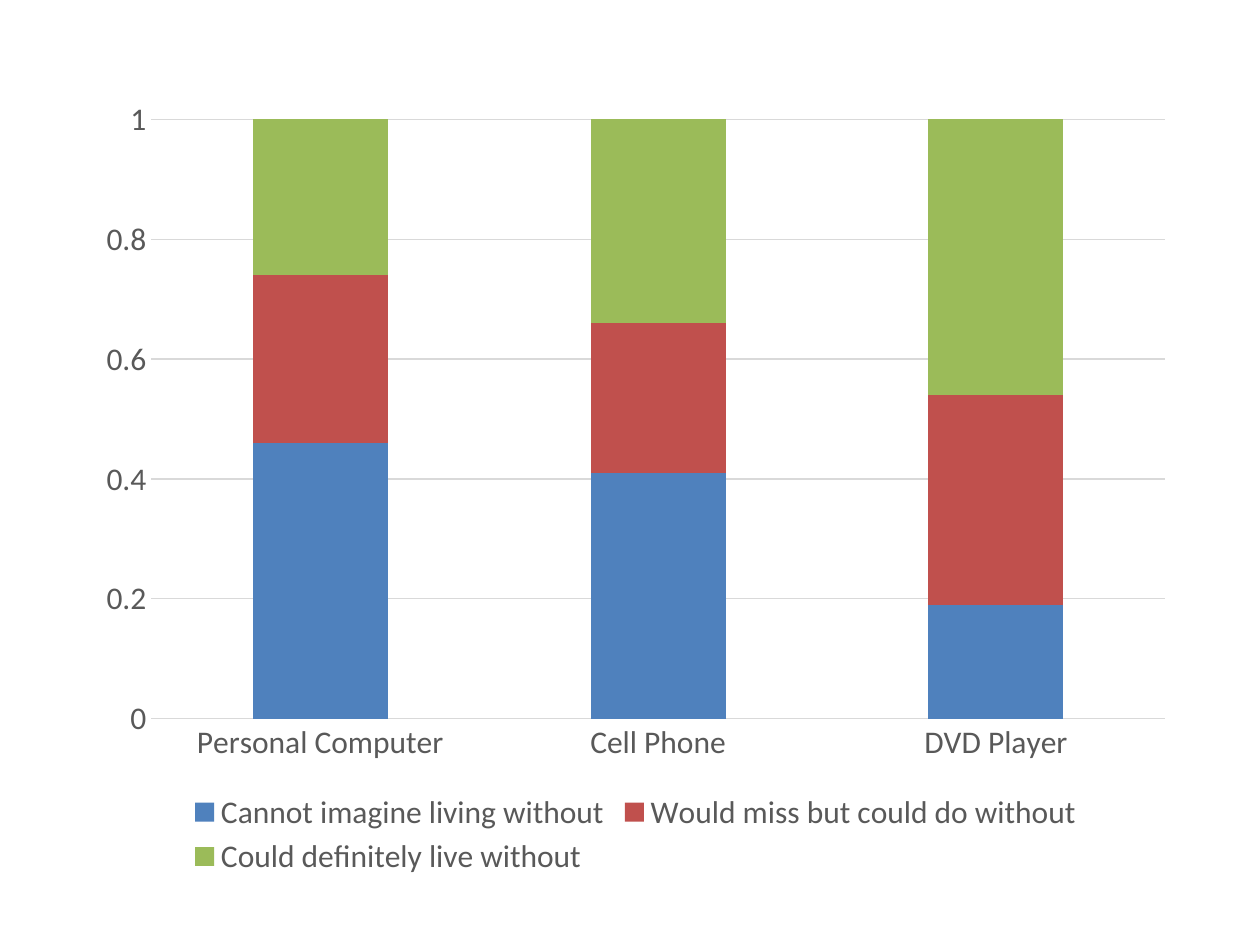
from pptx import Presentation
from pptx.chart.data import CategoryChartData as Data
from pptx.dml.color import RGBColor
from pptx.enum.chart import XL_CHART_TYPE as Kind, XL_LEGEND_POSITION as Place, XL_TICK_MARK as Tick
from pptx.util import Inches, Pt

BLUE = RGBColor(0x4F, 0x81, 0xBD)
RED = RGBColor(0xC0, 0x50, 0x4D)
GREEN = RGBColor(0x9B, 0xBB, 0x59)
GREY = RGBColor(0x59, 0x59, 0x59)
PALE = RGBColor(0xD9, 0xD9, 0xD9)

ITEMS = ["Personal Computer", "Cell Phone", "DVD Player"]
VIEWS = [
    ("Cannot imagine living without", (0.46, 0.41, 0.19), BLUE),
    ("Would miss but could do without", (0.28, 0.25, 0.35), RED),
    ("Could definitely live without", (0.26, 0.34, 0.46), GREEN),
]


def set_font(font):
    font.name = "Calibri"
    font.size = Pt(18)
    font.bold = False
    font.color.rgb = GREY


def set_line(line):
    line.color.rgb = PALE
    line.width = Pt(0.75)


def set_axes(chart):
    for axis in (chart.category_axis, chart.value_axis):
        axis.major_tick_mark = axis.minor_tick_mark = Tick.NONE
        set_font(axis.tick_labels.font)
    set_line(chart.category_axis.format.line)
    scale = chart.value_axis
    scale.minimum_scale = 0
    scale.maximum_scale = 1
    scale.major_unit = 0.2
    scale.format.line.fill.background()
    set_line(scale.major_gridlines.format.line)
    scale.tick_labels.number_format = "General"
    scale.tick_labels.number_format_is_linked = False


def set_legend(chart):
    chart.has_legend = True
    chart.legend.position = Place.BOTTOM
    chart.legend.include_in_layout = False
    set_font(chart.legend.font)


def add_stack(slide, box):
    data = Data()
    data.categories = ITEMS
    for name, shares, _ in VIEWS:
        data.add_series(name, shares)
    chart = slide.shapes.add_chart(Kind.COLUMN_STACKED, *box, data).chart
    chart.has_title = False
    set_font(chart.font)
    plot = chart.plots[0]
    plot.gap_width = 150
    plot.overlap = 100
    plot.vary_by_categories = False
    for bar, (_, _, color) in zip(plot.series, VIEWS):
        bar.format.fill.solid()
        bar.format.fill.fore_color.rgb = color
    set_axes(chart)
    set_legend(chart)


def main():
    deck = Presentation()
    deck.slide_width, deck.slide_height = Inches(10), Inches(7.5)
    slide = deck.slides.add_slide(deck.slide_layouts[6])
    add_stack(slide, [Inches(n) for n in (0.67, 0.67, 8.75, 6.33)])
    deck.save("out.pptx")


if __name__ == "__main__":
    main()
